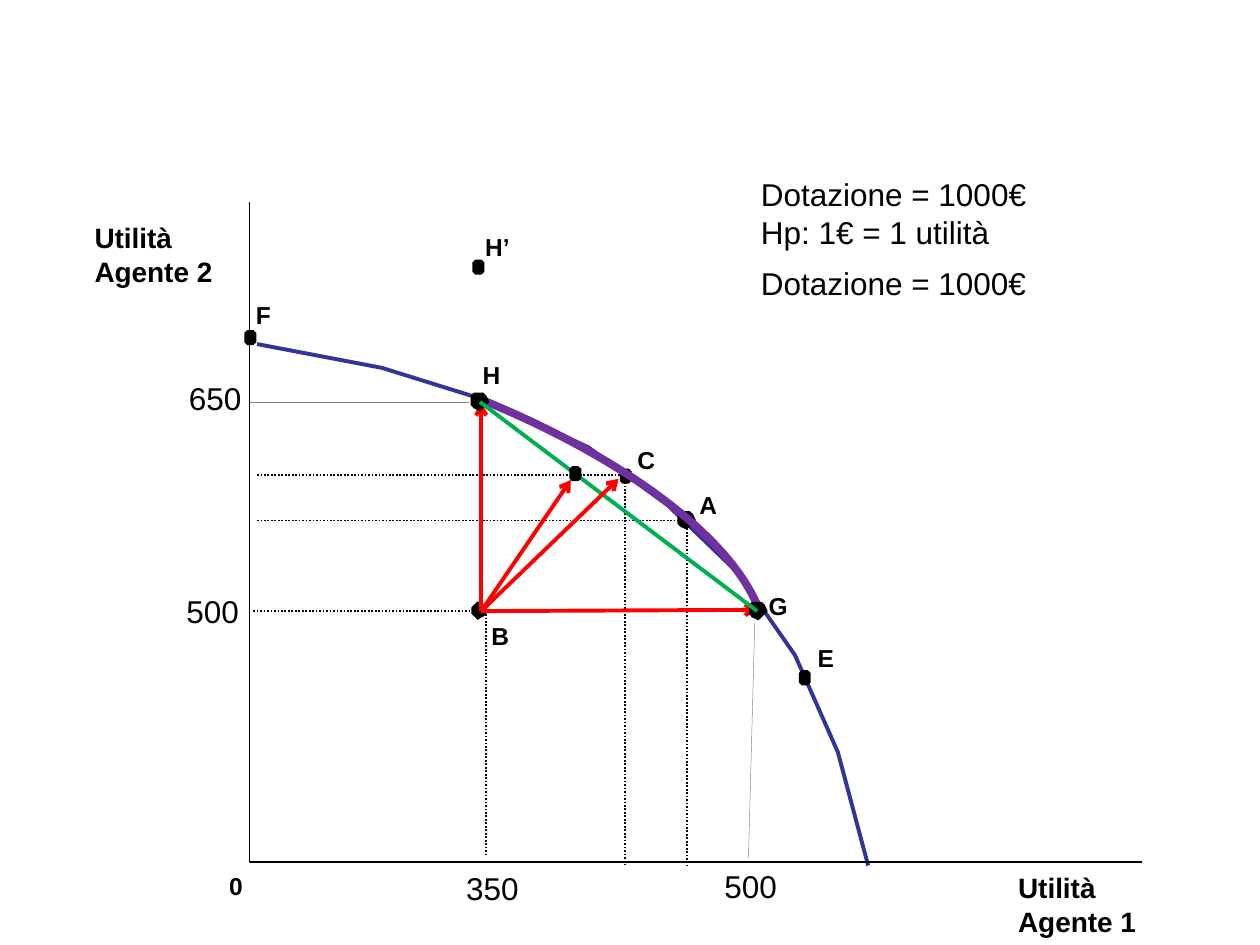
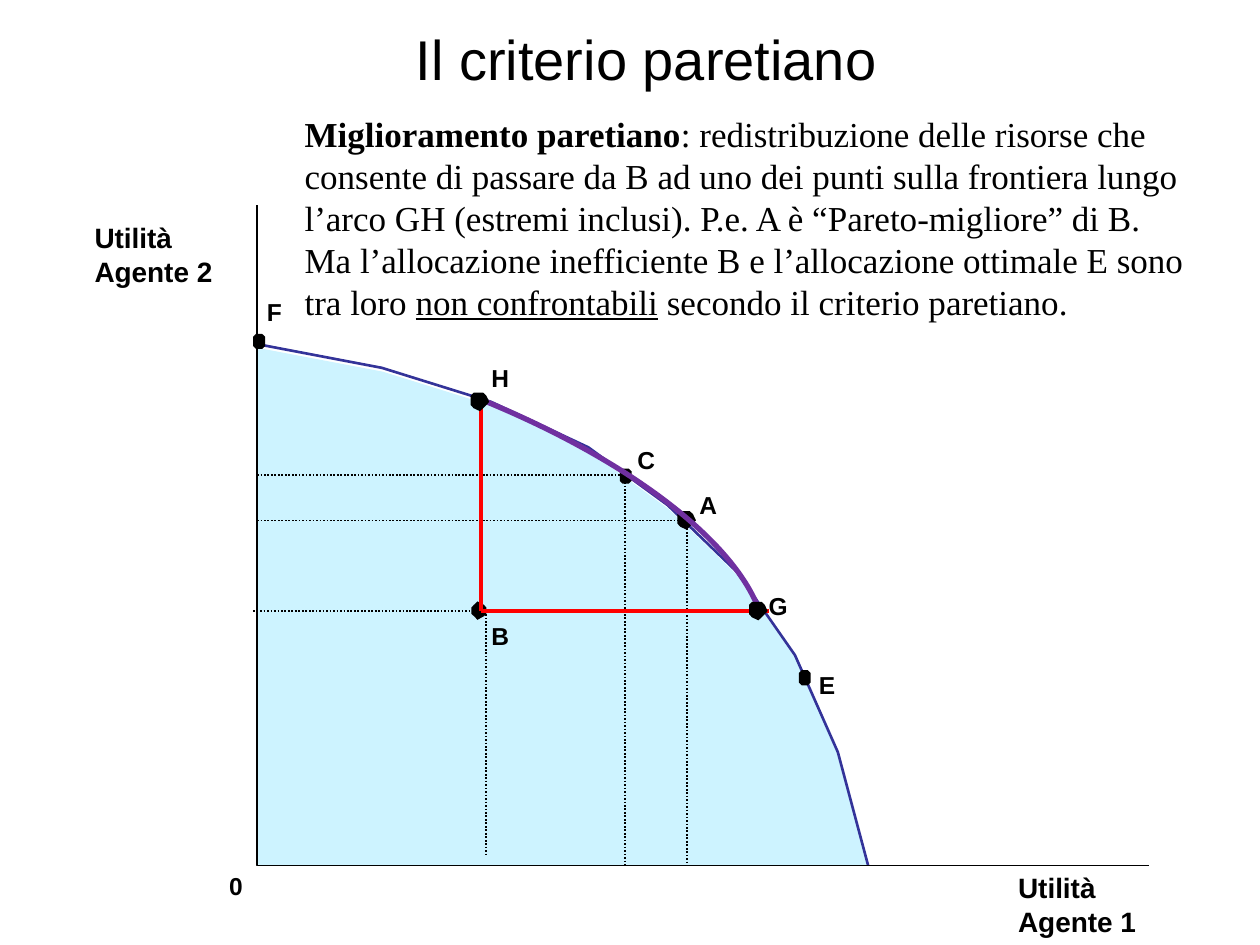
"""Two slides on Pareto improvements along a utility frontier."""
from dataclasses import dataclass

from lxml import etree
from pptx import Presentation
from pptx import util as u
from pptx.dml.color import RGBColor
from pptx.enum import dml, shapes, text
from pptx.oxml import ns


@dataclass(frozen=True)
class Theme:
    """Colours, fonts and type sizes shared by the slides."""
    ink: str = "000000"
    frontier: str = "333399"
    feasible: str = "CDF3FF"
    arc: str = "7030A0"
    improvement: str = "FF0000"
    chord: str = "00B050"
    thin: str = "808080"
    sans: str = "Arial"
    serif: str = "Times New Roman"
    title: int = 32
    body: int = 20
    value: int = 18
    axis: int = 16
    point: int = 14


THEME = Theme()

FRONTIER = [(496.1, 494.6), (478.8, 429.8), (454.3, 374.4), (421.2, 326.9), (381.6, 288.7),
            (336.2, 255.6), (280.8, 229.7), (218.2, 210.2), (146.9, 196.6)]
ARC = [(272.9, 227.5), (358.6, 262.1), (421.2, 309.6), (434.7, 351.2)]
BASE = 494.6
GUIDES = [((144.7, 349.2), (277.9, 488.9)),
          ((146.9, 271.4), (357.1, BASE)),
          ((146.9, 297.4), (392.4, BASE))]

SMALL = [(0, 5), (1.5, 5), (3.2, 3.4), (3.2, 0), (3.2, -2), (1.5, -3.6),
         (0, -3.6), (-2, -3.6), (-3.6, -2), (-3.6, 0), (-3.6, 3.4), (-2, 5)]
LARGE = [(0, 5.3), (1.8, 3.6), (3.6, 1.8), (5.3, 0), (3.6, -3.6), (1.8, -5.3),
         (0, -5.3), (-3.6, -5.3), (-5.3, -3.6), (-5.3, 0), (-5.3, 1.8), (-3.6, 3.6)]
ROUND = [(0, 5), (3.6, 3), (5, 1.5), (5, 0), (5, -2), (3.6, -3.6),
         (0, -5.5), (-2, -3.6), (-3.6, -2), (-3.6, 0), (-3.6, 1.5), (-2, 3)]

START = (275, 349.2)
H_POINT = (274.3, 229.7)
G_POINT = (433.4, 349.2)


def rgb(colour):
    """Turn a hex string into a colour."""
    return RGBColor.from_string(colour)


def outline(slide, points, colour=None, width=1, fill=None, dotted=False):
    """Draw straight segments through the points, closed when filled."""
    corners = [(u.Pt(x), u.Pt(y)) for x, y in points]
    builder = slide.shapes.build_freeform(*corners[0])
    builder.add_line_segments(corners[1:], close=fill is not None)
    shape = builder.convert_to_shape()
    shape.shadow.inherit = False
    if fill:
        shape.fill.solid()
        shape.fill.fore_color.rgb = rgb(fill)
    else:
        shape.fill.background()
    if colour:
        shape.line.color.rgb = rgb(colour)
        shape.line.width = u.Pt(width)
        if dotted:
            shape.line.dash_style = dml.MSO_LINE.ROUND_DOT
    else:
        shape.line.fill.background()
    return shape


def curve(slide, points, colour, width):
    """Draw one cubic curve from its four control points."""
    shape = outline(slide, points, colour, width)
    strokes = shape._element.spPr.find(".//" + ns.qn("a:path"))
    bend = etree.SubElement(strokes, ns.qn("a:cubicBezTo"))
    for segment in strokes.findall(ns.qn("a:lnTo")):
        bend.append(segment[0])
        strokes.remove(segment)


def dot(slide, centre, form=SMALL):
    """Mark an allocation on the diagram."""
    outline(slide, [(centre[0] + dx, centre[1] + dy) for dx, dy in form], fill=THEME.ink)


def segment(slide, start, end, colour, width=2.25, arrow=False):
    """Draw a straight line, with an arrowhead at its end if wanted."""
    ends = [u.Pt(value) for value in (*start, *end)]
    line = slide.shapes.add_connector(shapes.MSO_CONNECTOR.STRAIGHT, *ends)
    line.line.color.rgb = rgb(colour)
    line.line.width = u.Pt(width)
    properties = line._element.spPr
    if arrow:
        etree.SubElement(properties.find(ns.qn("a:ln")), ns.qn("a:tailEnd"), type="arrow")
    etree.SubElement(properties, ns.qn("a:effectLst"))


def add_run(paragraph, words, size, font=THEME.sans, bold=False, underline=False):
    """Append one formatted run."""
    run = paragraph.add_run()
    run.text = words
    run.font.name = font
    run.font.size = u.Pt(size)
    run.font.bold = bold
    run.font.underline = underline
    run.font.color.rgb = rgb(THEME.ink)


def text_frame(slide, x, y, width, height, inset=True):
    """Add a wrapping text box and return its frame."""
    frame = slide.shapes.add_textbox(u.Pt(x), u.Pt(y), u.Pt(width), u.Pt(height)).text_frame
    frame.word_wrap = True
    frame.auto_size = text.MSO_AUTO_SIZE.SHAPE_TO_FIT_TEXT
    if not inset:
        frame.margin_left = frame.margin_right = frame.margin_top = frame.margin_bottom = 0
    return frame


def write_lines(frame, lines, size, bold=False):
    """Write each line as a paragraph."""
    for index, line in enumerate(lines):
        paragraph = frame.add_paragraph() if index else frame.paragraphs[0]
        add_run(paragraph, line, size, bold=bold)


def point_label(slide, name, x, y, width=11):
    """Name an allocation in bold."""
    write_lines(text_frame(slide, x, y, width, 16.8, inset=False), [name], THEME.point, True)


def axis_label(slide, agent, x, y, width):
    """Name the agent whose utility an axis measures."""
    frame = text_frame(slide, x, y, width, 38.2, inset=False)
    write_lines(frame, ["Utilità", f"Agente {agent}"], THEME.axis, True)


def value_label(slide, lines, x, y, width):
    """Write plain values or assumptions."""
    write_lines(text_frame(slide, x, y, width, 7.2 + 21.6 * len(lines)), lines, THEME.value)


def diagram(slide, origin, frontier_width):
    """Draw the axes, frontier, guides and allocations common to both slides."""
    axis_label(slide, 1, 581.8, 497.5, 72)
    axis_label(slide, 2, 54, 126, 98)
    left, base = origin
    outline(slide, FRONTIER, THEME.frontier, frontier_width)
    outline(slide, [(left, base - 377.2), origin, (left + 509.8, base)], THEME.ink)
    for (x, y), (corner, foot) in GUIDES:
        outline(slide, [(x, y), (corner, y), (corner, foot)], THEME.ink, dotted=True)
    for centre, form in [((272.9, 349.2), ROUND), ((357.8, 271.4), SMALL),
                         ((392.4, 297.4), LARGE), ((460.1, 386.6), SMALL)]:
        dot(slide, centre, form)
    for name, x, y in [("A", 399.6, 280.1), ("B", 280.8, 355), ("C", 364.3, 254.2),
                       ("G", 439.2, 337.7), ("0", 131, 497.5)]:
        point_label(slide, name, x, y)


def contract_arc(slide, width):
    """Draw the arc of improvements with its two end points."""
    curve(slide, ARC, THEME.arc, width)
    for end in (H_POINT, G_POINT):
        dot(slide, end, LARGE)


def bargaining_slide(deck):
    """Build the slide with the endowment and the possible moves from B."""
    slide = deck.slides.add_slide(deck.slide_layouts[6])
    diagram(slide, (142.6, 492.5), 2.25)
    for target in [(275, 230.4), (432.7, 348.5)]:
        segment(slide, START, target, THEME.improvement, arrow=True)
    contract_arc(slide, 4.5)
    for centre in [(143.3, 192.2), (273.6, 151.9)]:
        dot(slide, centre)
    for name, x, y, width in [("E", 467.3, 367.2, 11), ("F", 146.2, 171.4, 11),
                              ("H", 275.8, 205.9, 15.8), ("H’", 277.2, 132.5, 41.8)]:
        point_label(slide, name, x, y, width)
    segment(slide, H_POINT, (432.7, 349.2), THEME.chord)
    segment(slide, (142.6, 229.7), (267.8, 229.7), THEME.thin, 0.25)
    segment(slide, (431.3, 355.7), (427.7, 490.3), THEME.thin, 0.25)
    endowment = "Dotazione = 1000€"
    for lines, x, y, width in [([endowment, "Hp: 1€ = 1 utilità"], 427.7, 96.5, 170),
                               ([endowment], 427.7, 147.6, 177.8),
                               (["650"], 100.8, 213.1, 58.3), (["500"], 99.4, 334.8, 58.3),
                               (["350"], 259.2, 493.2, 49), (["500"], 406.8, 491.8, 58.3)]:
        value_label(slide, lines, x, y, width)
    segment(slide, START, (326.2, 274.3), THEME.improvement, arrow=True)
    dot(slide, (329, 270))
    segment(slide, START, (353.5, 273.6), THEME.improvement, arrow=True)


def criterion_slide(deck):
    """Build the slide that states the Pareto criterion."""
    slide = deck.slides.add_slide(deck.slide_layouts[5])
    title = slide.shapes.title
    title.left, title.top, title.width, title.height = map(u.Pt, (42.5, 0, 653.8, 66.2))
    title.text_frame.vertical_anchor = text.MSO_ANCHOR.MIDDLE
    heading = title.text_frame.paragraphs[0]
    heading.alignment = text.PP_ALIGN.CENTER
    add_run(heading, "Il criterio paretiano", THEME.title)

    origin = (146.9, BASE)
    lowered = [(x + 0.5, min(y + 2.2, BASE)) for x, y in FRONTIER]
    outline(slide, lowered + [origin], fill=THEME.feasible)
    diagram(slide, origin, 1.5)

    frame = text_frame(slide, 167, 60.5, 535.7, 127.4)
    definition, comparison = frame.paragraphs[0], frame.add_paragraph()
    for paragraph, words, bold, underline in [
            (definition, "Miglioramento paretiano", True, False),
            (definition, ": redistribuzione delle risorse che consente di passare da B ad uno "
             "dei punti sulla frontiera lungo l’arco GH (estremi inclusi). "
             "P.e. A è “Pareto-migliore” di B.", False, False),
            (comparison, "Ma l’allocazione inefficiente B e l’allocazione ottimale E sono "
             "tra loro ", False, False),
            (comparison, "non confrontabili", False, True),
            (comparison, " secondo il criterio paretiano.", False, False)]:
        add_run(paragraph, words, THEME.body, THEME.serif, bold, underline)

    dot(slide, (148.3, 194.4))
    for name, x, y in [("E", 468, 383), ("F", 152.6, 169.9), ("H", 280.8, 207.4)]:
        point_label(slide, name, x, y)
    for target in [(275, 230.4), (439.2, 349.2)]:
        segment(slide, START, target, THEME.improvement)
    contract_arc(slide, 3)


def main():
    """Build and save the deck."""
    deck = Presentation()
    deck.slide_width, deck.slide_height = u.Pt(720), u.Pt(540)
    bargaining_slide(deck)
    criterion_slide(deck)
    deck.save("out.pptx")


if __name__ == "__main__":
    main()
